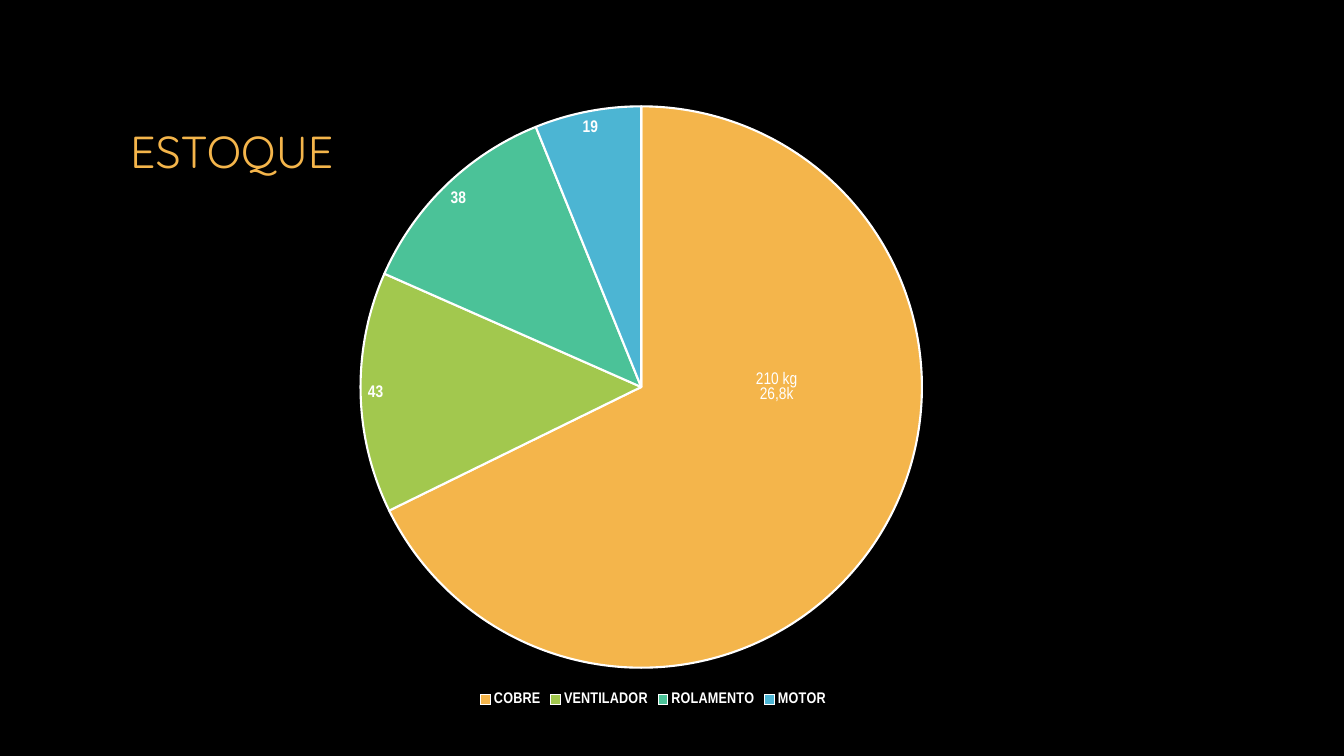
import pptx
import pptx.chart.data
import pptx.dml.color
import pptx.enum.chart
import pptx.enum.text
import pptx.oxml
import pptx.oxml.ns
import pptx.util

PX = 12192000 / 1344
WHITE = "FFFFFF"
AMBER = "F4B54B"
STOCK = [
    ("COBRE", 210, AMBER),
    ("VENTILADOR", 43, "A2C84E"),
    ("ROLAMENTO", 38, "4BC298"),
    ("MOTOR", 19, "4CB5D3"),
]


def px(length):
    """Turn pixels into EMU."""
    return pptx.util.Emu(round(length * PX))


def color(code):
    """Turn a hex string into a colour."""
    return pptx.dml.color.RGBColor.from_string(code)


def style(font, name, size, code, bold=False):
    """Format a font."""
    font.name = name
    font.size = pptx.util.Pt(size)
    font.color.rgb = color(code)
    font.bold = bold


def manual_layout(**values):
    """Build a chart layout element from its named values."""
    parts = "".join(f'<c:{name} val="{value}"/>' for name, value in values.items())
    return pptx.oxml.parse_xml(
        f'<c:layout {pptx.oxml.ns.nsdecls("c")}>'
        f"<c:manualLayout>{parts}</c:manualLayout></c:layout>"
    )


def add_heading(page, box, text):
    """Place and format the title in the given box."""
    title = page.shapes.title
    title.left, title.top, title.width, title.height = map(px, box)
    frame = title.text_frame
    frame.text = text
    frame.word_wrap = True
    frame.vertical_anchor = pptx.enum.text.MSO_ANCHOR.MIDDLE
    para = frame.paragraphs[0]
    para.alignment = pptx.enum.text.PP_ALIGN.LEFT
    style(para.runs[0].font, "Quicksand", 32, AMBER)


def label_copper(point):
    """Give the copper slice its two-line label, moved right of the centre."""
    label = point.data_label
    label.text_frame.text = "210 kg\n26,8k"
    for para in label.text_frame.paragraphs:
        style(para.runs[0].font, "Arial Narrow", 12, WHITE)
    label.position = pptx.enum.chart.XL_LABEL_POSITION.CENTER
    element = point._element.find(".//" + pptx.oxml.ns.qn("c:dLbl"))
    element.insert(1, manual_layout(x=0.02, y=-0.12))


def add_stock_pie(page, box):
    """Draw the stock pie and its legend in the given box."""
    data = pptx.chart.data.CategoryChartData()
    data.categories = [name for name, _, _ in STOCK]
    data.add_series("Series 1", [amount for _, amount, _ in STOCK])
    kind = pptx.enum.chart.XL_CHART_TYPE.PIE
    chart = page.shapes.add_chart(kind, *map(px, box), data).chart
    chart.has_title = False
    style(chart.font, "Quicksand", 10, WHITE)

    chart.has_legend = True
    chart.legend.position = pptx.enum.chart.XL_LEGEND_POSITION.BOTTOM
    chart.legend.include_in_layout = False
    style(chart.legend.font, "Arial Narrow", 11, WHITE, bold=True)

    plot = chart.plots[0]
    plot.vary_by_categories = True
    series = plot.series[0]
    for index, (_, _, code) in enumerate(STOCK):
        slice_format = series.points[index].format
        slice_format.fill.solid()
        slice_format.fill.fore_color.rgb = color(code)
        slice_format.line.color.rgb = color(WHITE)
        slice_format.line.width = pptx.util.Pt(1.5)

    labels = series.data_labels
    labels.show_value = True
    labels.position = pptx.enum.chart.XL_LABEL_POSITION.BEST_FIT
    style(labels.font, "Arial Narrow", 12, WHITE, bold=True)
    label_copper(series.points[0])

    area = chart._chartSpace.chart.plotArea
    for old in area.findall(pptx.oxml.ns.qn("c:layout")):
        area.remove(old)
    area.insert(0, manual_layout(
        layoutTarget="inner", xMode="edge", yMode="edge",
        x=0.14, y=0.02, w=0.69, h=0.91,
    ))


def main():
    """Build and save the stock slide."""
    deck = pptx.Presentation()
    deck.slide_width, deck.slide_height = px(1344), px(756)
    page = deck.slides.add_slide(deck.slide_layouts[5])
    page.background.fill.solid()
    page.background.fill.fore_color.rgb = color("000000")
    add_stock_pie(page, (246, 94, 815, 617))
    add_heading(page, (120, 0, 1092, 302), "ESTOQUE")
    deck.save("out.pptx")


if __name__ == "__main__":
    main()
